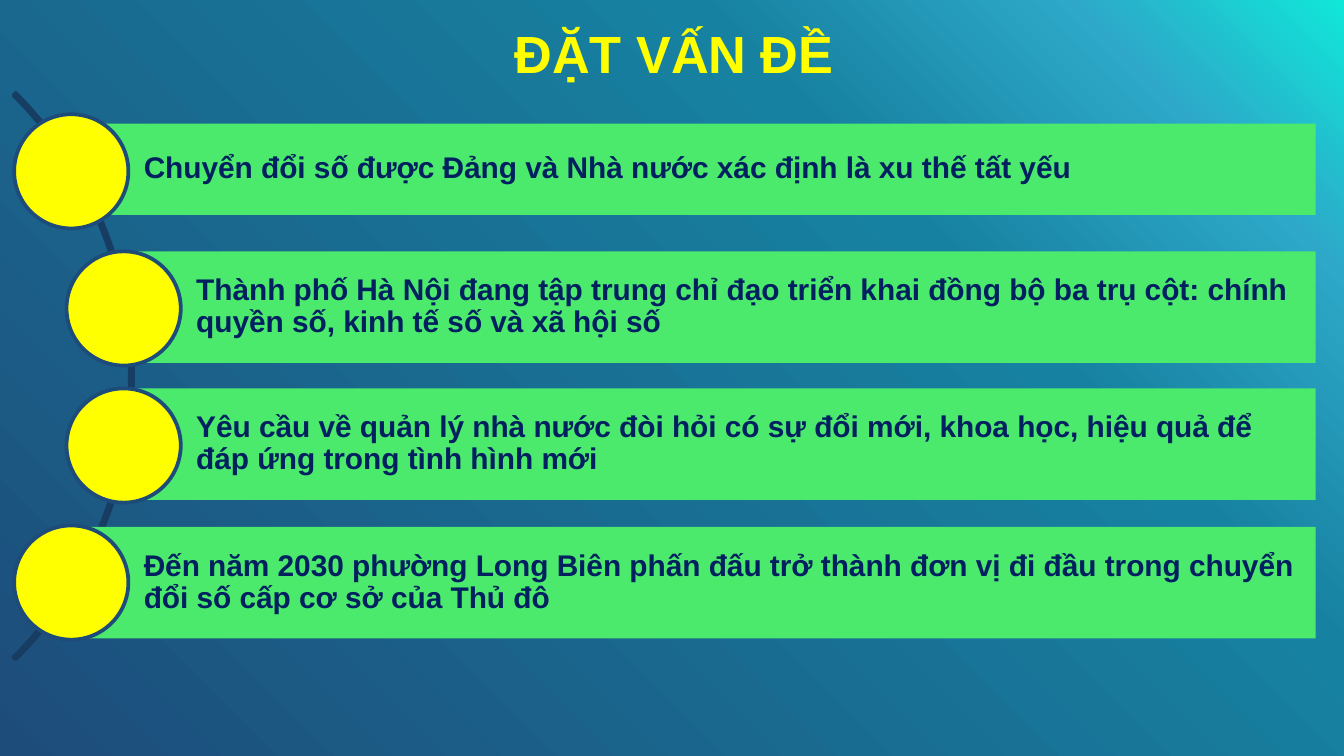
from lxml.etree import SubElement
from pptx import Presentation
from pptx.dml.color import RGBColor
from pptx.enum.shapes import MSO_SHAPE as Shape
from pptx.enum.text import MSO_ANCHOR as Anchor, PP_ALIGN as Align
from pptx.oxml.ns import qn
from pptx.util import Inches, Pt

TITLE = "ĐẶT VẤN ĐỀ"
# text, left edge of the bar, top of the bar, height of the bar
POINTS = [
    ("Chuyển đổi số được Đảng và Nhà nước xác định là xu thế tất yếu",
     0.53, 0.92, 0.68),
    ("Thành phố Hà Nội đang tập trung chỉ đạo triển khai đồng bộ ba trụ cột: "
     "chính quyền số, kinh tế số và xã hội số", 0.92, 1.87, 0.83),
    ("Yêu cầu về quản lý nhà nước đòi hỏi có sự đổi mới, khoa học, hiệu quả để "
     "đáp ứng trong tình hình mới", 0.92, 2.89, 0.83),
    ("Đến năm 2030 phường Long Biên phấn đấu trở thành đơn vị đi đầu trong chuyển "
     "đổi số cấp cơ sở của Thủ đô", 0.53, 3.92, 0.83),
]
COLORS = {"title": "FFFF00", "circle": "FFFF00", "outline": "1D4C7A",
          "arc": "173D62", "bar": "4BEA6D", "text": "002060"}
BACKGROUND = [(0, "10E7D9"), (13, "2DA8C8"), (31, "1781A1"), (100, "1D4C7A")]

SLIDE_WIDTH = 10
BAR_RIGHT = 9.79
CIRCLE = 0.85
FIRST_CIRCLE, PITCH = 0.85, 1.02


def color(name):
    return RGBColor.from_string(COLORS[name])


def add_shape(kind, left, top, width, height, fill=None, line=None):
    shape = slide.shapes.add_shape(
        kind, Inches(left), Inches(top), Inches(width), Inches(height))
    shape.shadow.inherit = False
    if fill:
        shape.fill.solid()
        shape.fill.fore_color.rgb = color(fill)
    else:
        shape.fill.background()
    if line:
        shape.line.color.rgb = color(line)
        shape.line.width = Pt(2)
    else:
        shape.line.fill.background()
    return shape


def write(shape, text, size, tone, align, anchor, insets):
    frame = shape.text_frame
    frame.word_wrap = True
    frame.vertical_anchor = anchor
    (frame.margin_left, frame.margin_top,
     frame.margin_right, frame.margin_bottom) = map(Inches, insets)
    paragraph = frame.paragraphs[0]
    paragraph.alignment = align
    paragraph.line_spacing = 0.9
    run = paragraph.add_run()
    run.text = text
    run.font.name = "Arial"
    run.font.size = Pt(size)
    run.font.bold = True
    run.font.color.rgb = color(tone)


# Widescreen slide, 16:9
deck = Presentation()
deck.slide_width = Inches(SLIDE_WIDTH)
deck.slide_height = Inches(SLIDE_WIDTH * 9 / 16)
slide = deck.slides.add_slide(deck.slide_layouts[6])

# Background gradient, from the top right corner
backdrop = slide.background.fill
backdrop.gradient()
backdrop.gradient_angle = 225
stops = next(slide.element.iter(qn("a:gsLst")))
for stop in list(stops):
    stops.remove(stop)
for percent, tone in BACKGROUND:
    stop = SubElement(stops, qn("a:gs"), pos=str(percent * 1000))
    SubElement(stop, qn("a:srgbClr"), val=tone)

# Title
title = slide.shapes.add_textbox(Inches(0.03), Inches(0.13), Inches(9.97), Inches(0.53))
write(title, TITLE, 28, "title", Align.CENTER, Anchor.BOTTOM, (0.06, 0.03, 0.06, 0.03))

# Arc behind the circles
arc = add_shape(Shape.BLOCK_ARC, -4.97, -0.18, 5.96, 5.96, line="arc")
for index, value in enumerate((189, 27, 0.004)):
    arc.adjustments[index] = value

# Bars, each with a circle centred on its left edge
for row, (text, left, top, height) in enumerate(POINTS):
    bar = add_shape(Shape.RECTANGLE, left, top, BAR_RIGHT - left, height, fill="bar")
    write(bar, text, 16, "text", Align.LEFT, Anchor.MIDDLE, (0.54, 0.04, 0.04, 0.04))
    add_shape(Shape.OVAL, left - CIRCLE / 2, FIRST_CIRCLE + row * PITCH,
              CIRCLE, CIRCLE, fill="circle", line="outline")

deck.save("out.pptx")
